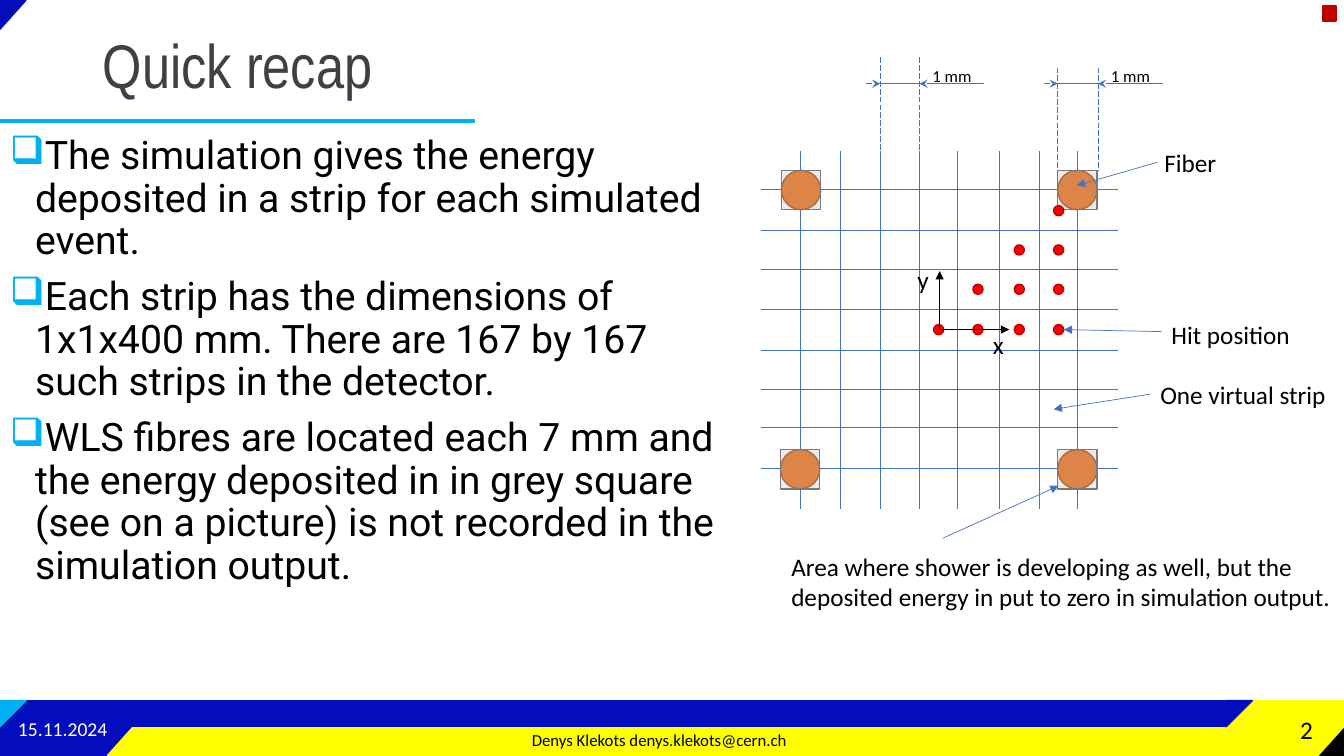
from dataclasses import dataclass

import pptx
import pptx.util
import pptx.dml.color
import pptx.enum.dml
import pptx.enum.shapes
import pptx.enum.text
import pptx.oxml
import pptx.oxml.ns

Inches = pptx.util.Inches
SHAPE = pptx.enum.shapes.MSO_SHAPE
ALIGN = pptx.enum.text.PP_ALIGN
ANCHOR = pptx.enum.text.MSO_ANCHOR


@dataclass(frozen=True)
class Theme:
    navy: str = "040DBC"
    cyan: str = "00B0F0"
    yellow: str = "FFFF00"
    black: str = "000000"
    white: str = "FFFFFF"
    dark: str = "404040"
    crimson: str = "C00000"
    red: str = "FF0000"
    blue: str = "4472C4"
    orange: str = "ED7D31"
    brown: str = "AF5C24"
    grey: str = "A5A5A5"
    grey_edge: str = "7A7A7A"
    title_font: str = "Arial Narrow"
    body_font: str = "Roboto"
    label_font: str = "Calibri"
    title: int = 44
    body: int = 28
    label: int = 18
    date: int = 14
    small: int = 12
    thick: float = 3
    line: float = 1
    thin: float = 0.5


T = Theme()

TITLE = "Quick recap"
BULLETS = [
    "The simulation gives the energy deposited in a strip for each simulated event.",
    "Each strip has the dimensions of 1x1x400 mm. There are 167 by 167 such strips in the detector.",
    "WLS fibres are located each 7 mm and the energy deposited in in grey square "
    "(see on a picture) is not recorded in the simulation output.",
]
FOOTER = [
    ("15.11.2024", (0.08, 7.03, 1.17, 0.4), T.date, T.white, ALIGN.LEFT),
    ("Denys Klekots denys.klekots@cern.ch", (4.29, 7.14, 4.5, 0.4), T.small, T.black, ALIGN.CENTER),
    ("2", (12.29, 7.04, 0.83, 0.4), T.label, T.black, ALIGN.RIGHT),
]
DECOR = [
    (SHAPE.RECTANGLE, (0, 6.95, 13.33, 0.55), T.yellow, 0),
    (SHAPE.RECTANGLE, (0, 6.95, 12.16, 0.26), T.navy, 0),
    (SHAPE.RIGHT_TRIANGLE, (1.03, 7.22, 0.29, 0.26), T.navy, 90),
    (SHAPE.RIGHT_TRIANGLE, (12.16, 6.95, 0.26, 0.26), T.navy, 90),
    (SHAPE.RECTANGLE, (0, 7.21, 1.05, 0.29), T.navy, 0),
    (SHAPE.RIGHT_TRIANGLE, (-0.02, 0.02, 0.29, 0.26), T.navy, 90),
    (SHAPE.RIGHT_TRIANGLE, (0, 6.95, 0.26, 0.26), T.cyan, 90),
    (SHAPE.RIGHT_TRIANGLE, (13.06, 7.24, 0.29, 0.26), T.black, 270),
    (SHAPE.RECTANGLE, (13.12, 0.06, 0.13, 0.15), T.crimson, 0),
]
GRID_X = [7.94, 8.33, 8.73, 9.12, 9.5, 9.91, 10.31, 10.69]
GRID_Y = [1.88, 2.29, 2.67, 3.07, 3.48, 3.86, 4.24, 4.65]
GRID_LEFT, GRID_RIGHT, GRID_TOP, GRID_BOTTOM = 7.55, 11.09, 1.5, 5.05
FIBERS = [(7.75, 1.69), (10.49, 1.69), (7.74, 4.46), (10.49, 4.46)]
FIBER_SIZE = 0.39
HIT_X = [9.26, 9.65, 10.06, 10.45]
HIT_Y = [3.22, 2.82, 2.43, 2.04]
HIT_SIZE = 0.1
DIMENSIONS = [("1 mm", 8.73, 9.12, 0.57, 1.59), ("1 mm", 10.49, 10.89, 0.67, 1.69)]
DIMENSION_Y = 0.83
CALLOUTS = [
    ("Fiber", (11.45, 1.41, 0.79, 0.4), (11.48, 1.61, 10.68, 1.84)),
    ("Hit position", (11.52, 3.12, 1.41, 0.4), (11.52, 3.29, 10.55, 3.27)),
    ("One virtual strip", (11.41, 3.71, 1.92, 0.4), (11.41, 3.91, 10.45, 4.06)),
    ("Area where shower is developing as well, but the deposited energy in put to zero "
     "in simulation output.", (7.75, 5.42, 5.66, 0.71), (9.35, 5.34, 10.5, 4.82)),
]
AXES = [
    ("x", (9.75, 3.22, 0.44, 0.4), (9.32, 3.27, 10.01, 3.27)),
    ("y", (9, 2.57, 0.44, 0.4), (9.32, 3.27, 9.32, 2.69)),
]


def rgb(color):
    return pptx.dml.color.RGBColor.from_string(color)


def add_xml(parent, tag, **attrs):
    el = pptx.oxml.parse_xml(f"<a:{tag} {pptx.oxml.ns.nsdecls('a')}/>")
    for name, value in attrs.items():
        el.set(name, value)
    parent.append(el)
    return el


def set_font(p, name, size, color):
    p.font.name = name
    p.font.size = pptx.util.Pt(size)
    p.font.color.rgb = rgb(color)


def add_shape(s, kind, box, fill, edge, rotation=0, alpha=None):
    sp = s.shapes.add_shape(kind, *map(Inches, box))
    sp.shadow.inherit = False
    sp.fill.solid()
    sp.fill.fore_color.rgb = rgb(fill)
    if alpha is not None:
        color = sp._element.spPr.find(".//" + pptx.oxml.ns.qn("a:srgbClr"))
        add_xml(color, "alpha", val=str(alpha * 1000))
    sp.line.color.rgb = rgb(edge)
    sp.line.width = pptx.util.Pt(T.line)
    sp.rotation = rotation


def add_line(s, ends, color=T.blue, width=T.thin, arrow=None, dashed=False):
    c = s.shapes.add_connector(pptx.enum.shapes.MSO_CONNECTOR.STRAIGHT, *map(Inches, ends))
    c.line.color.rgb = rgb(color)
    c.line.width = pptx.util.Pt(width)
    if dashed:
        c.line.dash_style = pptx.enum.dml.MSO_LINE.LONG_DASH
    if arrow:
        add_xml(c.line._get_or_add_ln(), "tailEnd", type=arrow)
    add_xml(c._element.spPr, "effectLst")


def add_text(s, text, box, size, color=T.black, align=ALIGN.LEFT, anchor=ANCHOR.TOP):
    tf = s.shapes.add_textbox(*map(Inches, box)).text_frame
    tf.word_wrap = True
    tf.vertical_anchor = anchor
    p = tf.paragraphs[0]
    p.text = text
    p.alignment = align
    set_font(p, T.label_font, size, color)


def add_title(s):
    sp = s.shapes.title
    sp.left, sp.top, sp.width, sp.height = map(Inches, (0.92, 0.15, 11.5, 1.06))
    sp.text_frame.vertical_anchor = ANCHOR.MIDDLE
    p = sp.text_frame.paragraphs[0]
    p.text = TITLE
    p.alignment = ALIGN.LEFT
    p.line_spacing = 0.9
    set_font(p, T.title_font, T.title, T.dark)


def add_bullets(s):
    tf = s.shapes.add_textbox(*map(Inches, (0, 1.3, 7.35, 5.35))).text_frame
    tf.word_wrap = True
    for i, text in enumerate(BULLETS):
        p = tf.add_paragraph() if i else tf.paragraphs[0]
        p.text = text
        p.line_spacing = 0.9
        p.space_before = pptx.util.Pt(10 if i else 0)
        pPr = p._p.get_or_add_pPr()
        pPr.set("marL", str(Inches(0.25)))
        pPr.set("indent", str(-Inches(0.25)))
        add_xml(add_xml(pPr, "buClr"), "srgbClr", val=T.cyan)
        add_xml(pPr, "buChar", char="❑")
        set_font(p, T.body_font, T.body, T.black)


def add_detector(s):
    for i, (x, y) in enumerate(zip(GRID_X, GRID_Y)):
        width = T.line if i in (0, len(GRID_X) - 1) else T.thin
        add_line(s, (GRID_LEFT, y, GRID_RIGHT, y), width=width)
        add_line(s, (x, GRID_TOP, x, GRID_BOTTOM), width=width)
    for x, y in FIBERS:
        box = (x, y, FIBER_SIZE, FIBER_SIZE)
        add_shape(s, SHAPE.OVAL, box, T.orange, T.brown)
        add_shape(s, SHAPE.RECTANGLE, box, T.grey, T.grey_edge, alpha=21)
    for text, left, right, top, bottom in DIMENSIONS:
        y = DIMENSION_Y
        add_line(s, (left, y, right, y))
        add_line(s, (right + 0.64, y, right, y), arrow="stealth")
        add_line(s, (left - 0.14, y, left, y), arrow="stealth")
        for x in (left, right):
            add_line(s, (x, top, x, bottom), dashed=True)
        add_text(s, text, (right + 0.03, y - 0.23, 0.7, 0.3), T.small)
    for row, y in enumerate(HIT_Y):
        for x in HIT_X[row:]:
            add_shape(s, SHAPE.OVAL, (x, y, HIT_SIZE, HIT_SIZE), T.red, T.crimson)
    for text, box, ends in CALLOUTS:
        add_line(s, ends, arrow="triangle")
        add_text(s, text, box, T.label)
    for text, box, ends in AXES:
        add_line(s, ends, T.black, T.line, arrow="triangle")
        add_text(s, text, box, T.label)


def main():
    prs = pptx.Presentation()
    prs.slide_width, prs.slide_height = Inches(13.33), Inches(7.5)
    s = prs.slides.add_slide(prs.slide_layouts[5])
    for kind, box, color, rotation in DECOR:
        add_shape(s, kind, box, color, color, rotation)
    add_line(s, (0, 1.2, 4.71, 1.2), T.cyan, T.thick)
    add_title(s)
    add_bullets(s)
    for text, box, size, color, align in FOOTER:
        add_text(s, text, box, size, color, align, ANCHOR.MIDDLE)
    add_detector(s)
    prs.save("out.pptx")


if __name__ == "__main__":
    main()
